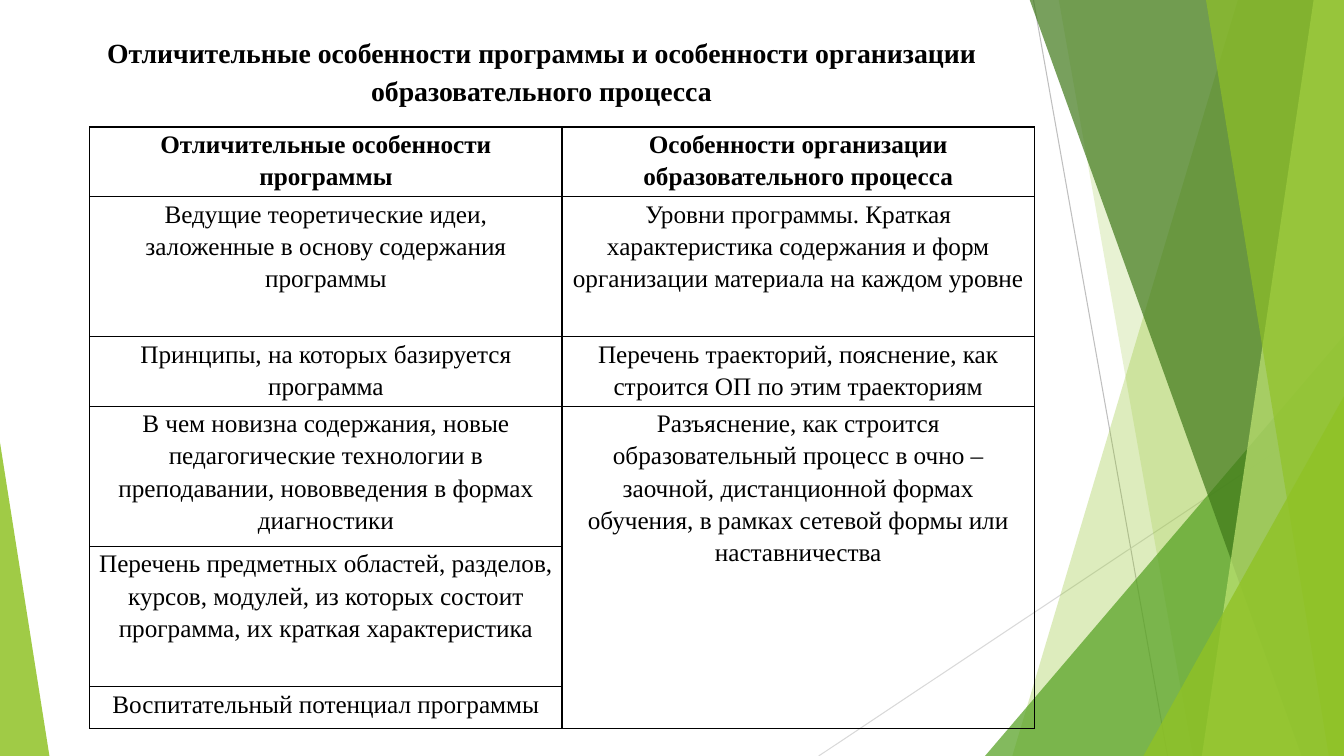
import pptx
import pptx.util
import pptx.dml.color
import pptx.enum.shapes
import pptx.enum.text
import pptx.oxml
import pptx.oxml.ns
from lxml import etree

Inches, Pt = pptx.util.Inches, pptx.util.Pt
FONT = "Times New Roman"
WIDE, HIGH, TOP = 13.33, 7.5, -0.01

COLORS = {
    "black": "000000",
    "grey": "BFBFBF",
    "pale": "D9D9D9",
    "lime": "90C226",
    "green": "54A021",
    "dark": "3F7819",
    "light": "C0E474",
}

TITLE = ("Отличительные особенности программы и особенности "
         "организации образовательного процесса")
ROWS = [
    (0.69, "Отличительные особенности программы",
     "Особенности организации образовательного процесса"),
    (1.39, "Ведущие теоретические идеи, заложенные в основу содержания программы",
     "Уровни программы. Краткая характеристика содержания и форм "
     "организации материала на каждом уровне"),
    (0.69, "Принципы, на которых базируется программа",
     "Перечень траекторий, пояснение, как строится ОП по этим траекториям"),
    (1.39, "В чем новизна содержания, новые педагогические технологии в "
     "преподавании, нововведения в формах диагностики",
     "Разъяснение, как строится образовательный процесс в очно –заочной, "
     "дистанционной формах обучения, в рамках сетевой формы или наставничества"),
    (1.39, "Перечень предметных областей, разделов, курсов, модулей, из которых "
     "состоит программа, их краткая характеристика", ""),
    (0.42, "Воспитательный потенциал программы", ""),
]


def color(name):
    return pptx.dml.color.RGBColor.from_string(COLORS[name])


def add_tag(parent, tag, **attrs):
    node = etree.SubElement(parent, pptx.oxml.ns.qn(tag))
    for key, value in attrs.items():
        node.set(key, str(value))
    return node


def write(frame, text, size=18, bold=False):
    frame.word_wrap = True
    para = frame.paragraphs[0]
    para.alignment = pptx.enum.text.PP_ALIGN.CENTER
    para.line_spacing = 1.15
    run = para.add_run()
    run.text = text
    run.font.name = FONT
    run.font.size = Pt(size)
    run.font.bold = bold
    run.font.color.rgb = color("black")


def draw_line(slide, start, end, tint):
    line = slide.shapes.add_connector(
        pptx.enum.shapes.MSO_CONNECTOR.STRAIGHT,
        *(Inches(value) for value in start + end))
    line.line.color.rgb = color(tint)
    line.line.width = Pt(0.75)
    add_tag(line._element.spPr, "a:effectLst")


def paint(shape, tint, alpha):
    shape.shadow.inherit = False
    shape.line.fill.background()
    shape.fill.solid()
    shape.fill.fore_color.rgb = color(tint)
    fill = shape._element.spPr.find(pptx.oxml.ns.qn("a:solidFill"))
    add_tag(fill[0], "a:alpha", val=alpha * 1000)


def draw_band(slide, top, base, tint, alpha):
    """Fill from a slanted edge to the right side of the slide."""
    pen = slide.shapes.build_freeform(
        Inches(top), Inches(TOP), scale=1.0)
    pen.add_line_segments([
        (Inches(x), Inches(y))
        for x, y in ((WIDE, TOP), (WIDE, HIGH), (base, HIGH))], close=True)
    paint(pen.convert_to_shape(), tint, alpha)


def draw_wedge(slide, left, top, width, apex, tint, alpha):
    """Triangle standing on the lower edge of the slide."""
    wedge = slide.shapes.add_shape(
        pptx.enum.shapes.MSO_SHAPE.ISOSCELES_TRIANGLE,
        Inches(left), Inches(top), Inches(width), Inches(HIGH - top))
    wedge.adjustments[0] = apex
    paint(wedge, tint, alpha)


def draw_decor(slide):
    draw_line(slide, (10.25, 0), (11.58, HIGH), "grey")
    draw_line(slide, (WIDE, 4.03), (8.12, HIGH), "pale")
    draw_band(slide, 12.28, 10.04, "lime", 30)
    draw_band(slide, 10.5, 11.83, "lime", 20)
    draw_wedge(slide, 9.77, 3.33, 3.56, 1, "green", 72)
    draw_band(slide, 10.21, 12.91, "dark", 70)
    draw_band(slide, 13.03, 11.92, "light", 70)
    draw_band(slide, 11.96, 13.18, "lime", 65)
    draw_wedge(slide, 11.34, 3.93, 1.99, 1, "lime", 80)
    draw_wedge(slide, 0, 4.39, 0.49, 0, "lime", 85)


def add_title(slide):
    box = slide.shapes.add_textbox(
        Inches(0.67), Inches(0.28), Inches(9.4), Inches(0.81))
    box.text_frame.vertical_anchor = pptx.enum.text.MSO_ANCHOR.MIDDLE
    write(box.text_frame, TITLE, size=19.8, bold=True)


def style_cell(cell):
    cell.margin_left = cell.margin_right = Inches(0.07)
    cell.margin_top = cell.margin_bottom = 0
    props = cell._tc.get_or_add_tcPr()
    for side in ("a:lnL", "a:lnR", "a:lnT", "a:lnB"):
        edge = add_tag(props, side, w=Pt(1))
        add_tag(add_tag(edge, "a:solidFill"), "a:srgbClr", val=COLORS["black"])
    cell.fill.background()


def add_grid(slide):
    total = sum(row[0] for row in ROWS)
    table = slide.shapes.add_table(
        len(ROWS), 2, Inches(0.89), Inches(1.26),
        Inches(9.37), Inches(total)).table
    table.first_row = table.horz_banding = False
    for r, (height, *texts) in enumerate(ROWS):
        table.rows[r].height = Inches(height)
        for c, text in enumerate(texts):
            cell = table.cell(r, c)
            style_cell(cell)
            if text:
                write(cell.text_frame, text, bold=r == 0)
    # The last answer spans three rows
    table.cell(3, 1).merge(table.cell(5, 1))


def main():
    deck = pptx.Presentation()
    deck.slide_width, deck.slide_height = Inches(WIDE), Inches(HIGH)
    slide = deck.slides.add_slide(deck.slide_layouts[6])
    draw_decor(slide)
    add_title(slide)
    add_grid(slide)
    deck.save("out.pptx")


if __name__ == "__main__":
    main()
